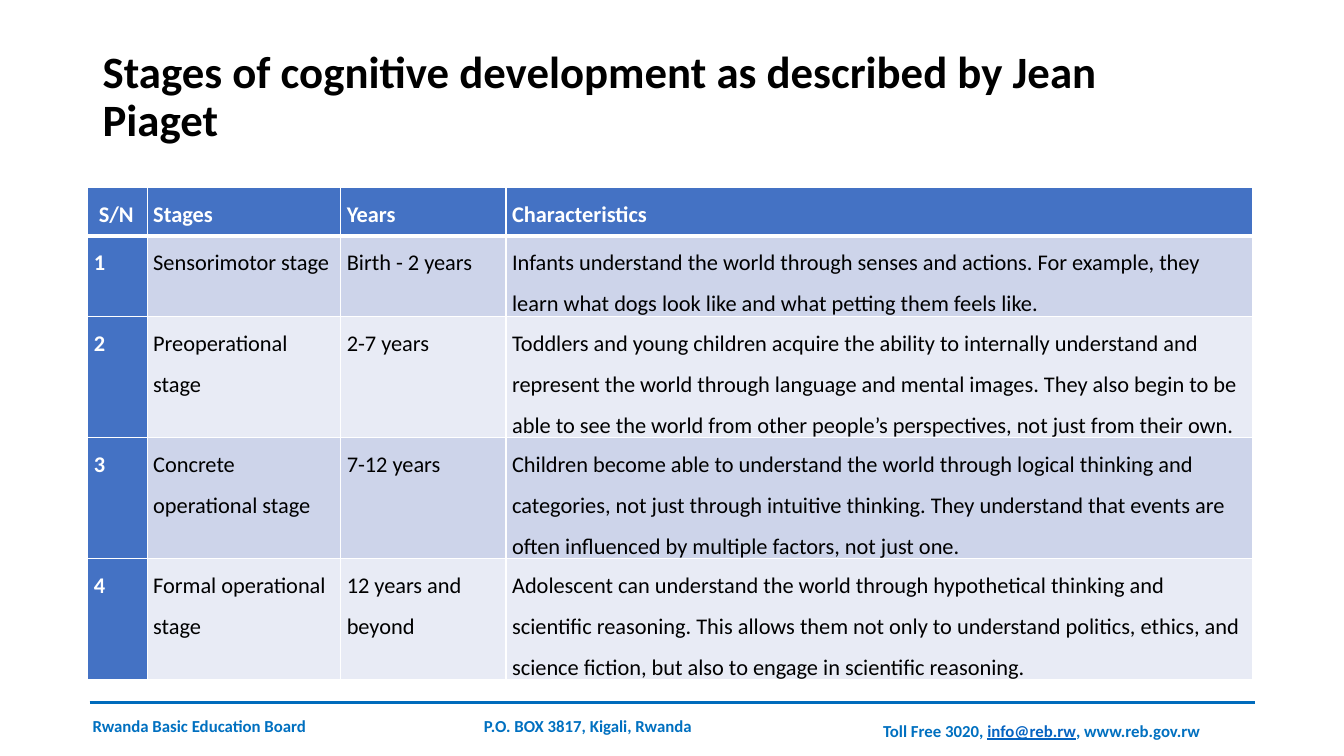
from lxml import etree
from pptx import Presentation
from pptx.dml.color import RGBColor
from pptx.enum.shapes import MSO_CONNECTOR
from pptx.enum.text import MSO_ANCHOR
from pptx.oxml.ns import qn
from pptx.util import Inches, Pt

STRAIGHT = MSO_CONNECTOR.STRAIGHT
MIDDLE = MSO_ANCHOR.MIDDLE
TOP = MSO_ANCHOR.TOP

FONT = "Calibri"
BLACK, WHITE = "000000", "FFFFFF"
HEADER_BLUE, FOOTER_BLUE, RULE_BLUE, MAIL_BLUE = "4472C4", "0070C0", "006BBC", "0563C1"
BANDS = ["CDD4EA", "E8EBF5"]

COLUMN_WIDTHS = [0.59, 1.92, 1.64, 7.4]
ROW_HEIGHTS = [0.48, 0.8, 1.2, 1.2, 1.2]
STAGES = [
    ("S/N", "Stages", "Years", "Characteristics"),
    ("1", "Sensorimotor stage", "Birth - 2 years",
     "Infants understand the world through senses and actions. For example, they learn "
     "what dogs look like and what petting them feels like."),
    ("2", "Preoperational stage", "2-7 years",
     "Toddlers and young children acquire the ability to internally understand and represent "
     "the world through language and mental images. They also begin to be able to see the "
     "world from other people’s perspectives, not just from their own."),
    ("3", "Concrete operational stage", "7-12 years",
     "Children become able to understand the world through logical thinking and categories, "
     "not just through intuitive thinking. They understand that events are often influenced "
     "by multiple factors, not just one."),
    ("4", "Formal operational stage", "12 years and beyond",
     "Adolescent can understand the world through hypothetical thinking and scientific "
     "reasoning. This allows them not only to understand politics, ethics, and science "
     "fiction, but also to engage in scientific reasoning."),
]


def color(hex_code):
    """Turn a hex string into a colour."""
    return RGBColor.from_string(hex_code)


def add_run(paragraph, text, size, hex_code, bold=True, underline=False):
    """Append one formatted run to a paragraph."""
    run = paragraph.add_run()
    run.text = text
    run.font.name = FONT
    run.font.size = Pt(size)
    run.font.bold = bold
    run.font.underline = underline
    run.font.color.rgb = color(hex_code)


def add_text(slide, left, top, width, height, spacing, anchor=TOP):
    """Add a wrapping text box and return its first paragraph."""
    box = slide.shapes.add_textbox(Inches(left), Inches(top), Inches(width), Inches(height))
    box.text_frame.word_wrap = True
    box.text_frame.vertical_anchor = anchor
    paragraph = box.text_frame.paragraphs[0]
    paragraph.line_spacing = spacing
    return paragraph


def add_title(slide, left, top, width, height):
    """Place the slide heading."""
    heading = add_text(slide, left, top, width, height, 0.9, MIDDLE)
    add_run(heading, "Stages of cognitive development as described by Jean Piaget", 32, BLACK)


def set_borders(cell, bottom_width, top_width):
    """Draw white borders around a table cell."""
    properties = cell._tc.get_or_add_tcPr()
    for side, width in (("L", 1), ("R", 1), ("T", top_width), ("B", bottom_width)):
        line = etree.SubElement(properties, qn(f"a:ln{side}"), w=str(Pt(width)))
        fill = etree.SubElement(line, qn("a:solidFill"))
        etree.SubElement(fill, qn("a:srgbClr"), val=WHITE)


def fill_cell(cell, text, row, column):
    """Style one cell of the stages table by its position."""
    is_heading = row == 0 or column == 0
    set_borders(cell, 3 if row == 0 else 1, 3 if row == 1 else 1)
    cell.fill.solid()
    cell.fill.fore_color.rgb = color(HEADER_BLUE if is_heading else BANDS[(row - 1) % 2])
    cell.margin_left = cell.margin_right = Inches(0.06)
    cell.margin_top = cell.margin_bottom = 0
    paragraph = cell.text_frame.paragraphs[0]
    paragraph.line_spacing = 1.5
    if row == 0 and column == 0:
        paragraph._p.get_or_add_pPr().set("marL", str(Inches(0.05)))
    add_run(paragraph, text, 16, WHITE if is_heading else BLACK, is_heading)


def add_stages_table(slide, left, top):
    """Build the table of development stages."""
    table = slide.shapes.add_table(
        len(STAGES), len(COLUMN_WIDTHS), Inches(left), Inches(top),
        Inches(sum(COLUMN_WIDTHS)), Inches(sum(ROW_HEIGHTS))).table
    for column, width in zip(table.columns, COLUMN_WIDTHS):
        column.width = Inches(width)
    for row, height in zip(table.rows, ROW_HEIGHTS):
        row.height = Inches(height)
    for row, stage in enumerate(STAGES):
        for column, text in enumerate(stage):
            fill_cell(table.cell(row, column), text, row, column)


def add_footer(slide, left, top, width):
    """Draw the footer rule with the board's contact details below it."""
    rule = slide.shapes.add_connector(
        STRAIGHT, Inches(left), Inches(top), Inches(left + width), Inches(top))
    rule.line.color.rgb = color(RULE_BLUE)
    rule.line.width = Pt(2.5)
    etree.SubElement(rule._element.spPr, qn("a:effectLst"))

    board = add_text(slide, left - 0.07, top + 0.05, 2.74, 0.33, 1.15)
    add_run(board, "Rwanda Basic Education Board", 12, FOOTER_BLUE)
    address = add_text(slide, left + 3.81, top + 0.05, 2.64, 0.33, 1.15)
    add_run(address, "P.O. BOX 3817, Kigali, Rwanda", 12, FOOTER_BLUE)
    contact = add_text(slide, left + 7.77, top + 0.1, 3.79, 0.33, 1.15)
    add_run(contact, "Toll Free 3020, ", 12, FOOTER_BLUE)
    add_run(contact, "info@reb.rw", 12, MAIL_BLUE, underline=True)
    add_run(contact, ", www.reb.gov.rw", 12, FOOTER_BLUE)


def main():
    """Build and save the slide."""
    presentation = Presentation()
    presentation.slide_width = Inches(13.33)
    presentation.slide_height = Inches(7.5)
    slide = presentation.slides.add_slide(presentation.slide_layouts[6])
    add_footer(slide, 0.89, 6.97, 11.56)
    add_title(slide, 0.92, 0.4, 10.57, 1.14)
    add_stages_table(slide, 0.87, 1.86)
    presentation.save("out.pptx")


if __name__ == "__main__":
    main()
